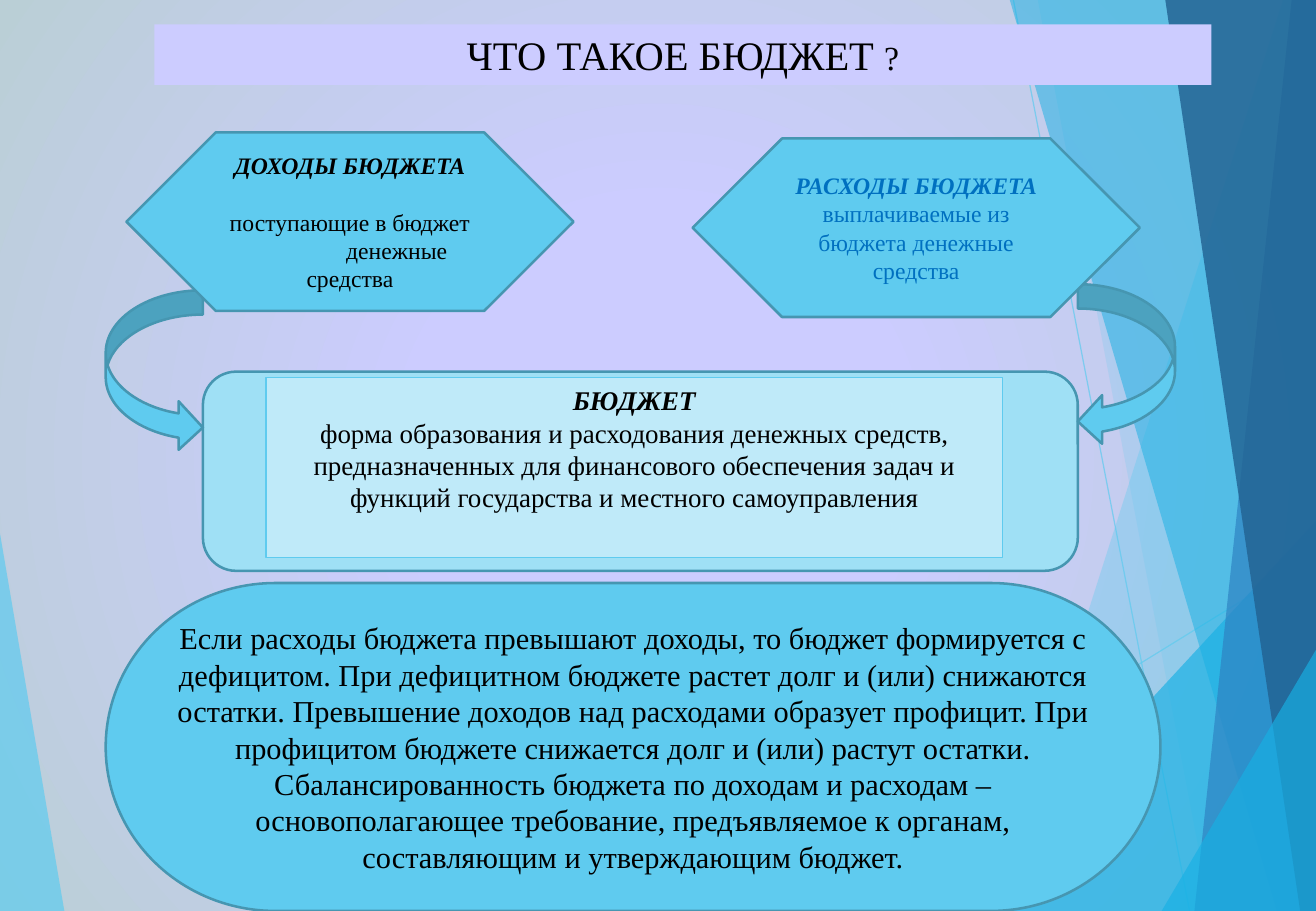
"""Builds a slide that explains what a budget is."""
from lxml.etree import SubElement
from pptx import Presentation
from pptx.dml.color import RGBColor
from pptx.enum.shapes import MSO_CONNECTOR, MSO_SHAPE
from pptx.enum.text import MSO_ANCHOR, MSO_AUTO_SIZE, PP_ALIGN
from pptx.oxml.ns import qn
from pptx.util import Inches, Pt

WIDE, HIGH = 10.83, 7.5
FONT = "Times New Roman"
HEX = {
    "sky": "5FCBEF", "azure": "17B0E4", "blue": "2E83C3", "navy": "226292",
    "lilac": "CCCCFF", "mist": "BACFD6", "pale": "9FE0F5", "ice": "BFEAF9",
    "edge": "4696B1", "ink": "000000", "link": "0070C0",
}

RAYS = [((6.08, HIGH), (WIDE, 4.57)), ((8.34, 0), (9.79, HIGH))]
WEDGE = ("sky", 70, [(0, 4.39), (0.53, HIGH), (0, HIGH)])
FACETS = [
    ("sky", 36, 10.56, 0, 8.17),
    ("sky", 20, 8.54, 0, 9.96),
    ("azure", 66, WIDE, 4.29, 7.86),
    ("azure", 50, 8.31, 0, 10.51),
    ("blue", 70, 10.63, 0, 9.83),
    ("navy", 82, 9.59, 0, 10.7),
    ("azure", 66, WIDE, 5.35, 9.56),
]

TITLE = [([("ЧТО ТАКОЕ БЮДЖЕТ ", 24, False), ("?", 20, False)], 0, 0)]
BUDGET = [
    ([("БЮДЖЕТ", 16, True)], 0, 0),
    ([("форма образования и расходования денежных средств, предназначенных "
       "для финансового обеспечения задач и функций государства и местного "
       "самоуправления", 16, False)], 0, 0),
]
SPEND = [([("РАСХОДЫ БЮДЖЕТА ", 14, True),
           ("выплачиваемые из бюджета денежные средства", 14, False)], 0, 0)]
INCOME = [
    ([("ДОХОДЫ БЮДЖЕТА", 14, True)], 0, 17),
    ([("поступающие в бюджет", 14, False)], 0, 0),
    ([("денежные", 14, False)], 0.77, 0),
    ([("средства", 14, False)], 0, 0),
]
BALANCE = [([(
    "Если расходы бюджета превышают доходы, то бюджет формируется с "
    "дефицитом. При дефицитном бюджете растет долг и (или) снижаются "
    "остатки. Превышение доходов над расходами образует профицит. При "
    "профицитом бюджете снижается долг и (или) растут остатки. "
    "Сбалансированность бюджета по доходам и расходам – основополагающее "
    "требование, предъявляемое к органам, составляющим и утверждающим "
    "бюджет.", 18, False)], 0, 0)]

TOP, MID = MSO_ANCHOR.TOP, MSO_ANCHOR.MIDDLE
PARTS = [
    (MSO_SHAPE.ROUNDED_RECTANGLE, (1.67, 3.06, 7.2, 1.64), "pale", "edge", 1.5, [], "ink", MID),
    (MSO_SHAPE.RECTANGLE, (2.19, 3.11, 6.06, 1.48), "ice", "sky", 0.75, BUDGET, "ink", TOP),
    (MSO_SHAPE.CURVED_RIGHT_ARROW, (0.87, 2.39, 0.8, 1.33), "sky", "edge", 1.5, [], "ink", MID),
    (MSO_SHAPE.CURVED_LEFT_ARROW, (8.87, 2.34, 0.8, 1.33), "sky", "edge", 1.5, [], "ink", MID),
    (MSO_SHAPE.FLOWCHART_PREPARATION, (5.7, 1.14, 3.68, 1.47), "sky", "edge", 1.5, SPEND, "link", MID),
    (MSO_SHAPE.FLOWCHART_PREPARATION, (1.04, 1.09, 3.68, 1.47), "sky", "edge", 1.5, INCOME, "ink", MID),
    (MSO_SHAPE.FLOWCHART_TERMINATOR, (0.87, 4.8, 8.68, 2.7), "sky", "edge", 1.5, BALANCE, "ink", MID),
]


def tint(name):
    return RGBColor.from_string(HEX[name])


def paint(fill, name):
    fill.solid()
    fill.fore_color.rgb = tint(name)


def fade(part, alpha):
    color = next(part._element.spPr.iter(qn("a:srgbClr")))
    SubElement(color, qn("a:alpha"), val=str(alpha * 1000))


def write(frame, paras, color, anchor):
    frame.word_wrap = True
    frame.auto_size = MSO_AUTO_SIZE.NONE
    frame.vertical_anchor = anchor
    for i, (runs, indent, after) in enumerate(paras):
        para = frame.add_paragraph() if i else frame.paragraphs[0]
        para.alignment = PP_ALIGN.CENTER
        para.space_after = Pt(after)
        if indent:
            para._p.get_or_add_pPr().set("marL", str(Inches(indent)))
        for text, size, strong in runs:
            run = para.add_run()
            run.text = text
            font = run.font
            font.name, font.size = FONT, Pt(size)
            font.bold = font.italic = strong
            font.color.rgb = tint(color)


def draw_back(slide):
    fill = slide.background.fill
    fill.gradient()
    grad = next(slide._element.iter(qn("a:gradFill")))
    for child in list(grad):
        grad.remove(child)
    stops = SubElement(grad, qn("a:gsLst"))
    for pos, name in ((30, "lilac"), (100, "mist")):
        stop = SubElement(stops, qn("a:gs"), pos=str(pos * 1000))
        SubElement(stop, qn("a:srgbClr"), val=HEX[name])
    route = SubElement(grad, qn("a:path"), path="circle")
    SubElement(route, qn("a:fillToRect"), l="50000", t="50000", r="50000", b="50000")


def draw_facet(shapes, name, alpha, points):
    spots = [(Inches(x), Inches(y)) for x, y in points]
    pen = shapes.build_freeform(*spots[0], scale=1.0)
    pen.add_line_segments(spots[1:], close=True)
    facet = pen.convert_to_shape()
    facet.shadow.inherit = False
    paint(facet.fill, name)
    fade(facet, alpha)
    facet.line.fill.background()


def draw_ray(shapes, start, end):
    ends = [Inches(v) for v in start + end]
    ray = shapes.add_connector(MSO_CONNECTOR.STRAIGHT, *ends)
    ray.line.color.rgb = tint("sky")
    ray.line.width = Pt(0.75)
    fade(ray, 70)
    SubElement(ray._element.spPr, qn("a:effectLst"))


def draw_title(slide):
    title = slide.shapes.title
    slide.shapes._spTree.append(title._element)
    title.left, title.top, title.width, title.height = map(Inches, (1.27, 0.2, 8.7, 0.5))
    paint(title.fill, "lilac")
    write(title.text_frame, TITLE, "ink", MID)


def draw_part(shapes, kind, box, fill, line, width, paras, color, anchor):
    part = shapes.add_shape(kind, *map(Inches, box))
    part.shadow.inherit = False
    paint(part.fill, fill)
    part.line.color.rgb = tint(line)
    part.line.width = Pt(width)
    if paras:
        write(part.text_frame, paras, color, anchor)


def main():
    deck = Presentation()
    deck.slide_width, deck.slide_height = Inches(WIDE), Inches(HIGH)
    slide = deck.slides.add_slide(deck.slide_layouts[5])
    shapes = slide.shapes
    draw_back(slide)
    draw_facet(shapes, *WEDGE)
    for start, end in RAYS:
        draw_ray(shapes, start, end)
    for name, alpha, x, y, foot in FACETS:
        draw_facet(shapes, name, alpha, [(x, y), (foot, HIGH), (WIDE, HIGH), (WIDE, y)])
    draw_title(slide)
    for part in PARTS:
        draw_part(shapes, *part)
    deck.save("out.pptx")


if __name__ == "__main__":
    main()
